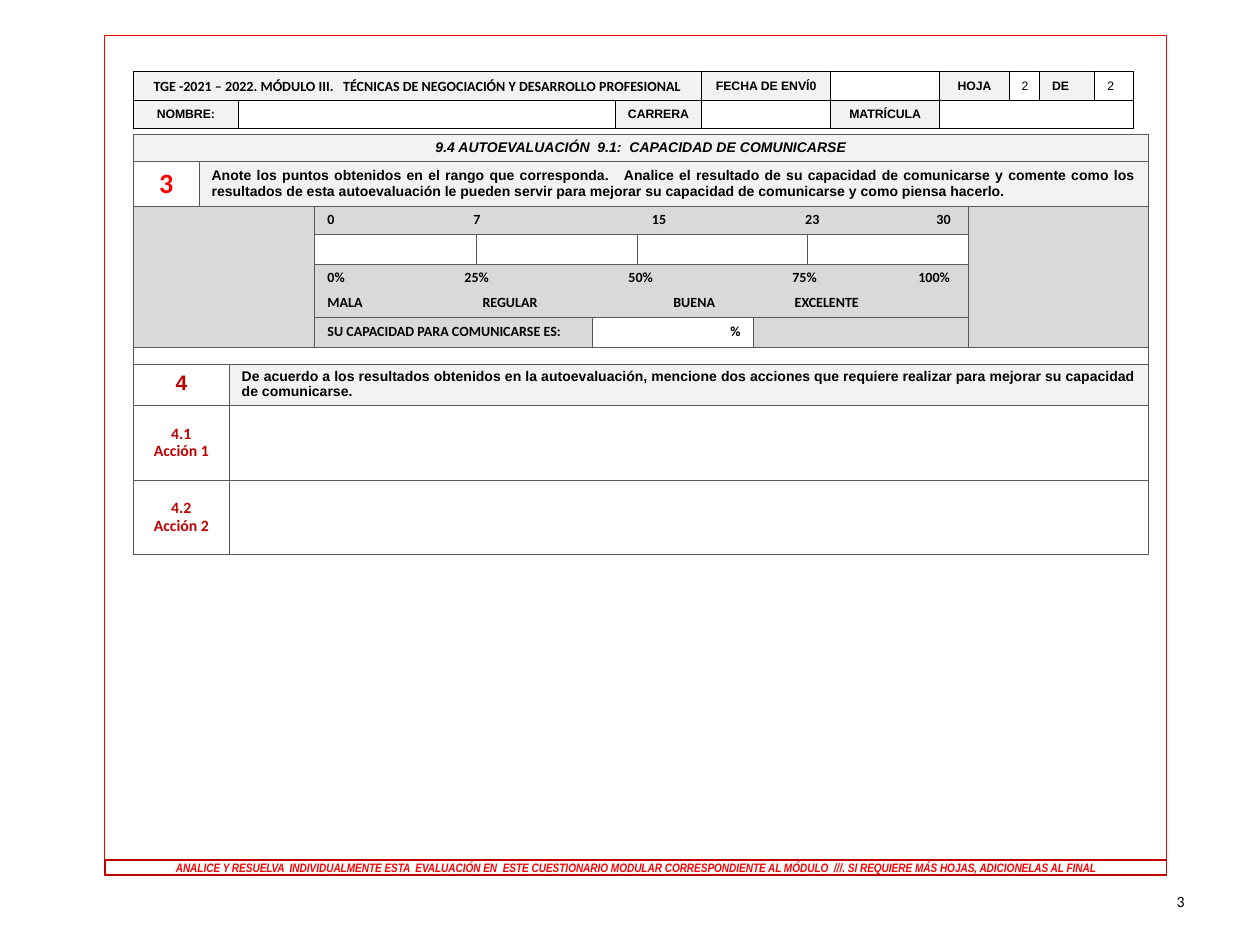
import pptx
import pptx.util
import pptx.dml.color
import pptx.enum.shapes
import pptx.enum.text
import pptx.oxml
import pptx.oxml.ns

Pt = pptx.util.Pt
ALIGN = pptx.enum.text.PP_ALIGN
ANCHOR = pptx.enum.text.MSO_ANCHOR
COLORS = {
    "black": "000000", "white": "FFFFFF", "light": "F2F2F2", "gray": "D9D9D9",
    "border": "595959", "red": "FF0000", "dark_red": "C00000",
}


def rgb(name):
    return pptx.dml.color.RGBColor.from_string(COLORS[name])


class FormPage:
    """Style and current slide of the evaluation form."""

    def __init__(self, page):
        self.page = page

    def fill_text(self, frame, text, size=8, font="Calibri", color="black", bold=True,
                  italic=False, align=ALIGN.LEFT, spacing=1.0, tabs=(), gap=0):
        frame.text = text
        for index, para in enumerate(frame.paragraphs):
            para.alignment = align
            para.line_spacing = spacing
            if index and gap:
                para.space_before = Pt(gap)
            if tabs:
                self.set_tabs(para, tabs[index])
            for span in para.runs:
                span.font.size = Pt(size)
                span.font.name = font
                span.font.bold = bold
                span.font.italic = italic
                span.font.color.rgb = rgb(color)

    def set_tabs(self, para, stops):
        stop_xml = "".join(f'<a:tab pos="{Pt(stop)}" algn="l"/>' for stop in stops)
        namespace = pptx.oxml.ns.nsdecls("a")
        para._p.get_or_add_pPr().append(
            pptx.oxml.parse_xml(f"<a:tabLst {namespace}>{stop_xml}</a:tabLst>"))

    def table(self, left, top, widths, heights, border):
        grid = self.page.shapes.add_table(
            len(heights), len(widths), Pt(left), Pt(top),
            Pt(sum(widths)), Pt(sum(heights))).table
        grid.first_row = grid.horz_banding = False
        for column, width in zip(grid.columns, widths):
            column.width = Pt(width)
        for row, height in zip(grid.rows, heights):
            row.height = Pt(height)
        for cell in grid.iter_cells():
            self.border(cell, border)
            cell.fill.solid()
            cell.fill.fore_color.rgb = rgb("white")
            # Small empty text keeps the low rows low
            cell.margin_top = cell.margin_bottom = 0
            cell.text_frame.paragraphs[0]._p.get_or_add_endParaRPr().set("sz", "400")
        return grid

    def border(self, cell, color):
        namespace = pptx.oxml.ns.nsdecls("a")
        for side in ("lnL", "lnR", "lnT", "lnB"):
            cell._tc.get_or_add_tcPr().append(pptx.oxml.parse_xml(
                f'<a:{side} {namespace} w="{Pt(0.5)}"><a:solidFill>'
                f'<a:srgbClr val="{COLORS[color]}"/></a:solidFill></a:{side}>'))

    def cell(self, grid, row, column, text="", fill="white", across=1, down=1,
             anchor=ANCHOR.MIDDLE, **style):
        cell = grid.cell(row, column)
        if across * down > 1:
            cell.merge(grid.cell(row + down - 1, column + across - 1))
        cell.fill.solid()
        cell.fill.fore_color.rgb = rgb(fill)
        cell.vertical_anchor = anchor
        if text:
            cell.margin_top = cell.margin_bottom = Pt(3.6)
            self.fill_text(cell.text_frame, text, **style)

    def rectangle(self, left, top, width, height, line, weight, fill=None):
        box = self.page.shapes.add_shape(
            pptx.enum.shapes.MSO_SHAPE.RECTANGLE, Pt(left), Pt(top), Pt(width), Pt(height))
        box.shadow.inherit = False
        box.line.color.rgb = rgb(line)
        box.line.width = Pt(weight)
        if fill:
            box.fill.solid()
            box.fill.fore_color.rgb = rgb(fill)
        else:
            box.fill.background()
        return box

    def text_box(self, left, top, width, height, text, **style):
        box = self.page.shapes.add_textbox(Pt(left), Pt(top), Pt(width), Pt(height))
        box.text_frame.word_wrap = True
        box.text_frame.vertical_anchor = ANCHOR.MIDDLE
        self.fill_text(box.text_frame, text, **style)


def add_evaluation(form):
    grid = form.table(
        76.3, 76.8, [37.4, 9.4, 49, 92.2, 66.2, 25.9, 66.2, 31, 92.2, 103],
        [15.7, 25.1, 16, 17.1, 30.3, 17.1, 9.7, 23.4, 42.9, 42.3], "border")
    tight = {"spacing": 0.9}
    centered = {"spacing": 0.9, "align": ALIGN.CENTER}

    # Heading and question 3
    form.cell(grid, 0, 0, "9.4 AUTOEVALUACIÓN  9.1:  CAPACIDAD DE COMUNICARSE", "light",
              across=10, font="Arial", italic=True, **centered)
    form.cell(grid, 1, 0, "3", size=16, color="red", **centered)
    form.cell(grid, 1, 1, "Anote los puntos obtenidos en el rango que corresponda.   "
              "Analice el resultado de su capacidad de comunicarse y comente como los "
              "resultados de esta autoevaluación le pueden servir para mejorar su capacidad "
              "de comunicarse y como piensa hacerlo.", "light",
              across=9, font="Arial", align=ALIGN.JUSTIFY)

    # Score scale between two gray side panels
    form.cell(grid, 2, 0, fill="gray", across=3, down=4)
    form.cell(grid, 2, 9, fill="gray", down=4)
    form.cell(grid, 2, 3, "0\t7\t15\t23\t30", "gray", across=6, anchor=ANCHOR.BOTTOM,
              tabs=[(83.4, 185.4, 273, 348)], **tight)
    for column, across in ((3, 1), (4, 2), (6, 2), (8, 1)):
        form.cell(grid, 3, column, across=across)
    form.cell(grid, 4, 3, "0%\t25%\t50%\t75%\t100%\nMALA\tREGULAR\tBUENA\tEXCELENTE",
              "gray", across=6, anchor=ANCHOR.TOP, gap=5.5,
              tabs=[(78.3, 172, 265.7, 337.7), (88.6, 197.7, 267)], **tight)
    form.cell(grid, 5, 3, "SU CAPACIDAD PARA COMUNICARSE ES:", "gray", across=2, **tight)
    form.cell(grid, 5, 5, "%", across=2, align=ALIGN.RIGHT, **tight)
    form.cell(grid, 5, 7, fill="gray", across=2)
    form.cell(grid, 6, 0, across=10)

    # Question 4 and its two actions
    form.cell(grid, 7, 0, "4", across=2, size=12, font="Arial", color="dark_red", **centered)
    form.cell(grid, 7, 2, "De acuerdo a los resultados obtenidos en la autoevaluación, "
              "mencione dos acciones que requiere realizar para mejorar su capacidad de "
              "comunicarse.", "light", across=8, font="Arial", align=ALIGN.JUSTIFY, **tight)
    for number in (1, 2):
        form.cell(grid, 7 + number, 0, f"4.{number}\nAcción {number}", across=2,
                  size=9, color="dark_red", **centered)
        form.cell(grid, 7 + number, 2, across=8)


def add_header(form):
    grid = form.table(76.3, 40.8, [59.8, 215.3, 49.7, 73.4, 62.6, 39.6, 17.3, 31.7, 22.3],
                      [16.6, 14.9], "black")
    form.cell(grid, 0, 0, "TGE -2021 – 2022. MÓDULO III.   TÉCNICAS DE NEGOCIACIÓN Y "
              "DESARROLLO PROFESIONAL", "light", across=3, align=ALIGN.CENTER)
    labels = [(0, 3, "FECHA DE ENVÍ0"), (0, 5, "HOJA"), (0, 7, "DE"),
              (1, 0, "NOMBRE:"), (1, 2, "CARRERA"), (1, 4, "MATRÍCULA")]
    for row, column, label in labels:
        form.cell(grid, row, column, label, "light", size=7, font="Arial",
                  align=ALIGN.LEFT if label == "DE" else ALIGN.CENTER)
    for column in (6, 8):
        form.cell(grid, 0, column, "2", size=7, font="Arial", bold=False)
    form.cell(grid, 1, 5, across=4)


def main():
    deck = pptx.Presentation()
    deck.slide_width, deck.slide_height = Pt(720), Pt(540)
    form = FormPage(deck.slides.add_slide(deck.slide_layouts[6]))

    add_evaluation(form)
    form.text_box(516.2, 500.4, 167.8, 28.8, "3", size=9, bold=False, align=ALIGN.RIGHT)
    form.rectangle(59.8, 20.5, 606.6, 480, "red", 0.5)
    add_header(form)

    # Footer instruction
    footer = form.rectangle(60, 491.3, 606.6, 8.9, "dark_red", 1, "white")
    footer.text_frame.word_wrap = True
    footer.text_frame.vertical_anchor = ANCHOR.MIDDLE
    footer.text_frame.margin_top = footer.text_frame.margin_bottom = 0
    form.fill_text(footer.text_frame, "ANALICE Y RESUELVA  INDIVIDUALMENTE ESTA  EVALUACIÓN "
                   "EN  ESTE CUESTIONARIO MODULAR CORRESPONDIENTE AL MÓDULO  ///. SI REQUIERE "
                   "MÁS HOJAS, ADICIONELAS AL FINAL", size=7, font="Arial Narrow", color="red",
                   italic=True, align=ALIGN.CENTER)
    deck.save("out.pptx")


if __name__ == "__main__":
    main()
